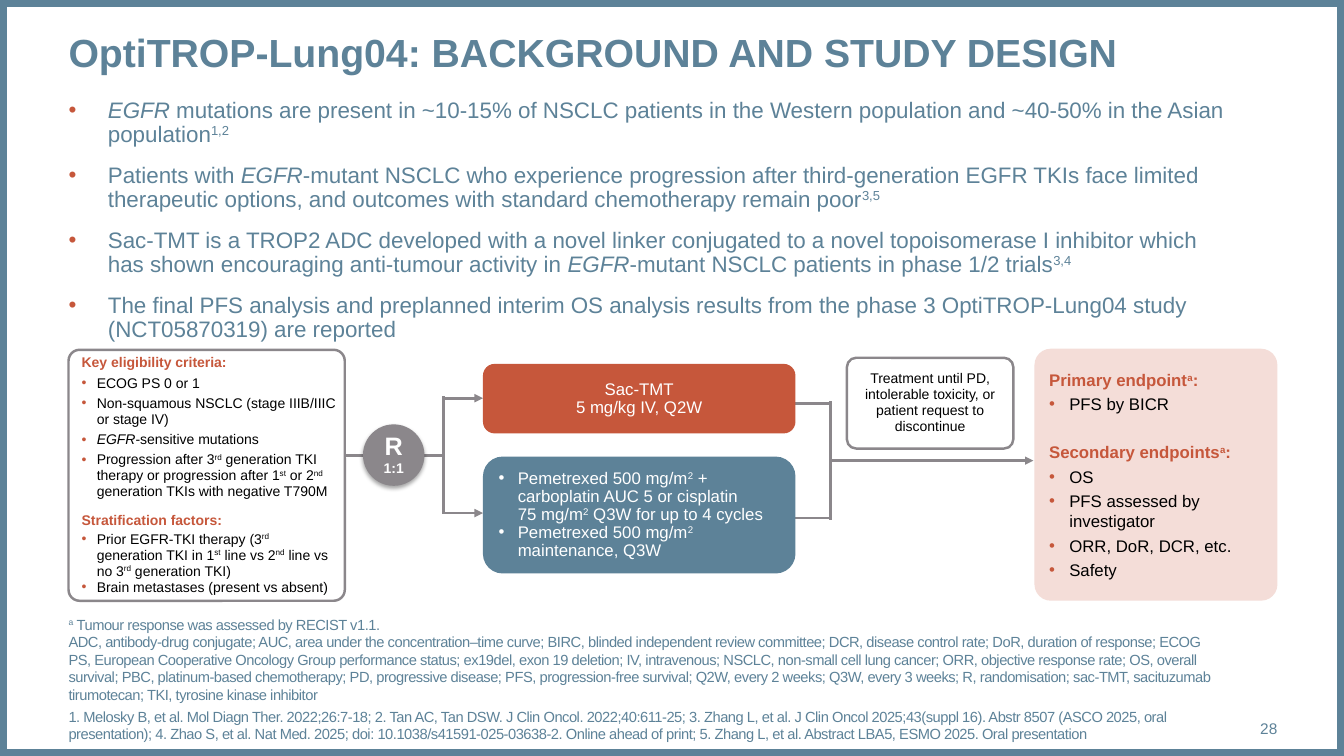
"""Build the OptiTROP-Lung04 background and study design slide."""
from copy import deepcopy
from dataclasses import dataclass

from lxml.etree import SubElement as Sub
from pptx import Presentation
from pptx.dml.color import RGBColor as RGB
from pptx.enum.shapes import MSO_CONNECTOR as Conn, MSO_SHAPE as Kind
from pptx.enum.text import MSO_ANCHOR as Anchor, MSO_AUTO_SIZE as Auto, PP_ALIGN as Align
from pptx.oxml.ns import qn
from pptx.util import Inches, Pt


@dataclass(frozen=True)
class Theme:
    """Colours, type sizes and line widths."""
    font: str = "Arial"
    blue: str = "5D8298"
    rust: str = "C6573B"
    pink: str = "F4DDD8"
    grey: str = "8B878B"
    white: str = "FFFFFF"
    black: str = "000000"
    title: float = 28
    body: float = 16
    arm: float = 12
    small: float = 10
    note: float = 10.5
    page: float = 11
    big: float = 18
    frame: float = 10
    edge: float = 1.75
    wire: float = 2


T = Theme()

LOOKS = {
    "title": dict(size=T.title, color=T.blue, bold=True),
    "point": dict(size=T.body, color=T.blue, indent=0.39, dot=T.rust, line=0.9, before=12),
    "note": dict(size=T.note, color=T.blue, before=3, track=-30),
    "page": dict(size=T.page, color=T.blue, align=Align.RIGHT),
    "letter": dict(size=T.big, color=T.white, bold=True, align=Align.CENTER, line=0.9),
    "ratio": dict(size=T.small, color=T.white, bold=True, align=Align.CENTER, line=0.9),
    "key": dict(size=T.small, color=T.rust, bold=True, line=0.95, after=3),
    "key2": dict(size=T.small, color=T.rust, bold=True, line=0.95, before=6, after=2),
    "rule": dict(size=T.small, color=T.black, indent=0.15, dot=T.rust, line=0.95, after=3),
    "factor": dict(size=T.small, color=T.black, indent=0.15, dot=T.rust, line=0.95),
    "arm": dict(size=T.arm, color=T.white, align=Align.CENTER, line=0.9),
    "drug": dict(size=T.arm, color=T.white, indent=0.19, dot=T.white, line=0.9),
    "stop": dict(size=T.small, color=T.black, align=Align.CENTER, line=0.95, after=2),
    "goal": dict(size=T.arm, color=T.rust, bold=True, after=3),
    "goal2": dict(size=T.arm, color=T.rust, bold=True, before=17, after=3),
    "end": dict(size=T.arm, color=T.black, indent=0.2, dot=T.rust, after=3),
}

# In texts, ^x^ is superscript and _x_ is italic.
TITLE = [("title", "OptiTROP-Lung04: BACKGROUND AND STUDY DESIGN")]
POINTS = [
    ("point", "_EGFR_ mutations are present in ~10-15% of NSCLC patients in the Western population and ~40-50% in the Asian population^1,2^"),
    ("point", "Patients with _EGFR_-mutant NSCLC who experience progression after third-generation EGFR TKIs face limited therapeutic options, and outcomes with standard chemotherapy remain poor^3,5^"),
    ("point", "Sac-TMT is a TROP2 ADC developed with a novel linker conjugated to a novel topoisomerase I inhibitor which \nhas shown encouraging anti-tumour activity in _EGFR_-mutant NSCLC patients in phase 1/2 trials^3,4^"),
    ("point", "The final PFS analysis and preplanned interim OS analysis results from the phase 3 OptiTROP-Lung04 study (NCT05870319) are reported"),
]
NOTES = [
    ("note", "^a^ Tumour response was assessed by RECIST v1.1.\nADC, antibody-drug conjugate; AUC, area under the concentration–time curve; BIRC, blinded independent review committee; DCR, disease control rate; DoR, duration of response; ECOG PS, European Cooperative Oncology Group performance status; ex19del, exon 19 deletion; IV, intravenous; NSCLC, non-small cell lung cancer; ORR, objective response rate; OS, overall survival; PBC, platinum-based chemotherapy; PD, progressive disease; PFS, progression-free survival; Q2W, every 2 weeks; Q3W, every 3 weeks; R, randomisation; sac-TMT, sacituzumab tirumotecan; TKI, tyrosine kinase inhibitor"),
    ("note", "1. Melosky B, et al. Mol Diagn Ther. 2022;26:7-18; 2. Tan AC, Tan DSW. J Clin Oncol. 2022;40:611-25; 3. Zhang L, et al. J Clin Oncol 2025;43(suppl 16). Abstr 8507 (ASCO 2025, oral presentation); 4. Zhao S, et al. Nat Med. 2025; doi: 10.1038/s41591-025-03638-2. Online ahead of print; 5. Zhang L, et al. Abstract LBA5, ESMO 2025. Oral presentation"),
]
PAGE = [("page", "28")]
RANDOM = [("letter", "R"), ("ratio", "1:1")]
ENTRY = [
    ("key", "Key eligibility criteria:"),
    ("rule", "ECOG PS 0 or 1"),
    ("rule", "Non-squamous NSCLC (stage IIIB/IIIC or stage IV)"),
    ("rule", "_EGFR_-sensitive mutations"),
    ("rule", "Progression after 3^rd^ generation TKI therapy or progression after 1^st^ or 2^nd^ generation TKIs with negative T790M"),
    ("key2", "Stratification factors:"),
    ("factor", "Prior EGFR-TKI therapy (3^rd^ generation TKI in 1^st^ line vs 2^nd^ line vs no 3^rd^ generation TKI)"),
    ("factor", "Brain metastases (present vs absent)"),
]
TEST = [("arm", "Sac-TMT"), ("arm", "5 mg/kg IV, Q2W")]
CHEMO = [
    ("drug", "Pemetrexed 500 mg/m^2^ + carboplatin AUC 5 or cisplatin \n75 mg/m^2^ Q3W for up to 4 cycles"),
    ("drug", "Pemetrexed 500 mg/m^2^ maintenance, Q3W"),
]
STOP = [("stop", "Treatment until PD, intolerable toxicity, or patient request to discontinue")]
ENDS = [
    ("goal", "Primary endpoint^a^:"),
    ("end", "PFS by BICR"),
    ("goal2", "Secondary endpoints^a^:"),
    ("end", "OS"),
    ("end", "PFS assessed by investigator"),
    ("end", "ORR, DoR, DCR, etc."),
    ("end", "Safety"),
]

LEFT, FORK, JOIN, ARM = 0.68, 4.4, 8.24, 4.79
WIRES = [
    ((3.3, 4.52), (FORK, 4.52), False),
    ((FORK, 3.93), (FORK, 5.1), False),
    ((FORK, 3.95), (ARM, 3.95), True),
    ((FORK, 5.09), (ARM, 5.09), True),
    ((7.86, 4), (JOIN, 4), False),
    ((7.86, 5.14), (JOIN, 5.14), False),
    ((JOIN, 3.98), (JOIN, 5.16), False),
    ((JOIN, 4.57), (10.25, 4.57), True),
]
PAD = (0.1, 0.05, 0.1, 0.05)
FLAT = (0, 0, 0, 0)
CARDS = [
    ((LEFT, 3.47, 2.74, 2.49), 0.044, T.white, T.grey, (0.1, 0.05, 0.04, 0.05), ENTRY),
    ((ARM, 3.61, 3.1, 0.69), 0.169, T.rust, None, PAD, TEST),
    ((ARM, 4.53, 3.1, 1.16), 0.169, T.blue, None, PAD, CHEMO),
    ((8.4, 3.55, 1.65, 0.9), 0.101, T.white, T.grey, PAD, STOP),
    ((10.26, 3.46, 2.41, 2.5), 0.067, T.pink, None, PAD, ENDS),
]


def add_run(para, text, look, sup, ital):
    """Add styled text, with line breaks of the same size."""
    for i, part in enumerate(text.split("\n")):
        if i:
            para.add_line_break()
            para._p[-1].append(deepcopy(props))
        run = para.add_run()
        run.text = part
        font = run.font
        font.name, font.size = T.font, Pt(look["size"])
        font.bold, font.italic = look.get("bold", False), ital
        font.color.rgb = RGB.from_string(look["color"])
        props = run._r.get_or_add_rPr()
        if sup:
            props.set("baseline", "30000")
        if "track" in look:
            props.set("spc", str(look["track"]))


def fill_text(shape, paras, pad=PAD, anchor=Anchor.MIDDLE):
    """Write paragraphs into a shape."""
    frame = shape.text_frame
    frame.word_wrap, frame.auto_size = True, Auto.NONE
    frame.vertical_anchor = anchor
    (frame.margin_left, frame.margin_top,
     frame.margin_right, frame.margin_bottom) = map(Inches, pad)
    for i, (name, text) in enumerate(paras):
        look = LOOKS[name]
        para = frame.add_paragraph() if i else frame.paragraphs[0]
        para.alignment = look.get("align", Align.LEFT)
        para.line_spacing = look.get("line", 1.0)
        para.space_before = Pt(look.get("before", 0) if i else 0)
        para.space_after = Pt(look.get("after", 0))
        props, step = para._p.get_or_add_pPr(), Inches(look.get("indent", 0))
        props.set("marL", str(step))
        props.set("indent", str(-step))
        if "dot" in look:
            Sub(Sub(props, qn("a:buClr")), qn("a:srgbClr"), val=look["dot"])
            Sub(props, qn("a:buFont"), typeface=T.font)
            Sub(props, qn("a:buChar"), char="•")
        else:
            Sub(props, qn("a:buNone"))
        for j, chunk in enumerate(text.split("^")):
            for k, part in enumerate(chunk.split("_")):
                if part:
                    add_run(para, part, look, j % 2 == 1, k % 2 == 1)


def add_form(slide, kind, box, fill, edge=None, width=T.edge):
    """Add a flat preset shape."""
    shape = slide.shapes.add_shape(kind, *map(Inches, box))
    shape.shadow.inherit = False
    for paint, color in ((shape.fill, fill), (shape.line.fill, edge)):
        if color:
            paint.solid()
            paint.fore_color.rgb = RGB.from_string(color)
        else:
            paint.background()
    if edge:
        shape.line.width = Pt(width)
    return shape


def add_wire(slide, start, stop, arrow):
    """Add a grey connector, with an arrowhead if asked."""
    wire = slide.shapes.add_connector(Conn.STRAIGHT, *map(Inches, start + stop))
    wire.line.color.rgb = RGB.from_string(T.grey)
    wire.line.width = Pt(T.wire)
    if arrow:
        Sub(wire.line._get_or_add_ln(), qn("a:tailEnd"), type="triangle")
    Sub(wire._element.spPr, qn("a:effectLst"))


def main():
    """Lay out the slide and save it."""
    deck = Presentation()
    deck.slide_width, deck.slide_height = Inches(13.33), Inches(7.5)
    slide = deck.slides.add_slide(deck.slide_layouts[3])
    add_form(slide, Kind.RECTANGLE, (0, 0, 13.33, 7.5), None, T.blue, T.frame)
    for spot, box, paras, anchor in (
            (0, (LEFT, 0.28, 11.99, 0.94), TITLE, Anchor.TOP),
            (1, (LEFT, 0.98, 11.99, 4.95), POINTS, Anchor.TOP),
            (2, (LEFT, 6.97, 11.34, 0.4), NOTES, Anchor.BOTTOM)):
        hold = slide.placeholders[spot]
        hold.left, hold.top, hold.width, hold.height = map(Inches, box)
        fill_text(hold, paras, FLAT, anchor)
    page = slide.shapes.add_textbox(*map(Inches, (11.81, 7.03, 0.86, 0.4)))
    fill_text(page, PAGE, FLAT)
    for wire in WIRES:
        add_wire(slide, *wire)
    disc = add_form(slide, Kind.OVAL, (3.6, 4.21, 0.61, 0.61), T.grey)
    glow = Sub(disc._element.spPr.find(qn("a:effectLst")), qn("a:outerShdw"),
               blurRad=str(Pt(3.1)), dist=str(Pt(1.8)), dir="5400000")
    Sub(Sub(glow, qn("a:srgbClr"), val=T.black), qn("a:alpha"), val="35000")
    fill_text(disc, RANDOM, (0, 0.05, 0, 0.05))
    for box, bend, fill, edge, pad, paras in CARDS:
        card = add_form(slide, Kind.ROUNDED_RECTANGLE, box, fill, edge)
        card.adjustments[0] = bend
        fill_text(card, paras, pad)
    deck.save("out.pptx")


if __name__ == "__main__":
    main()
